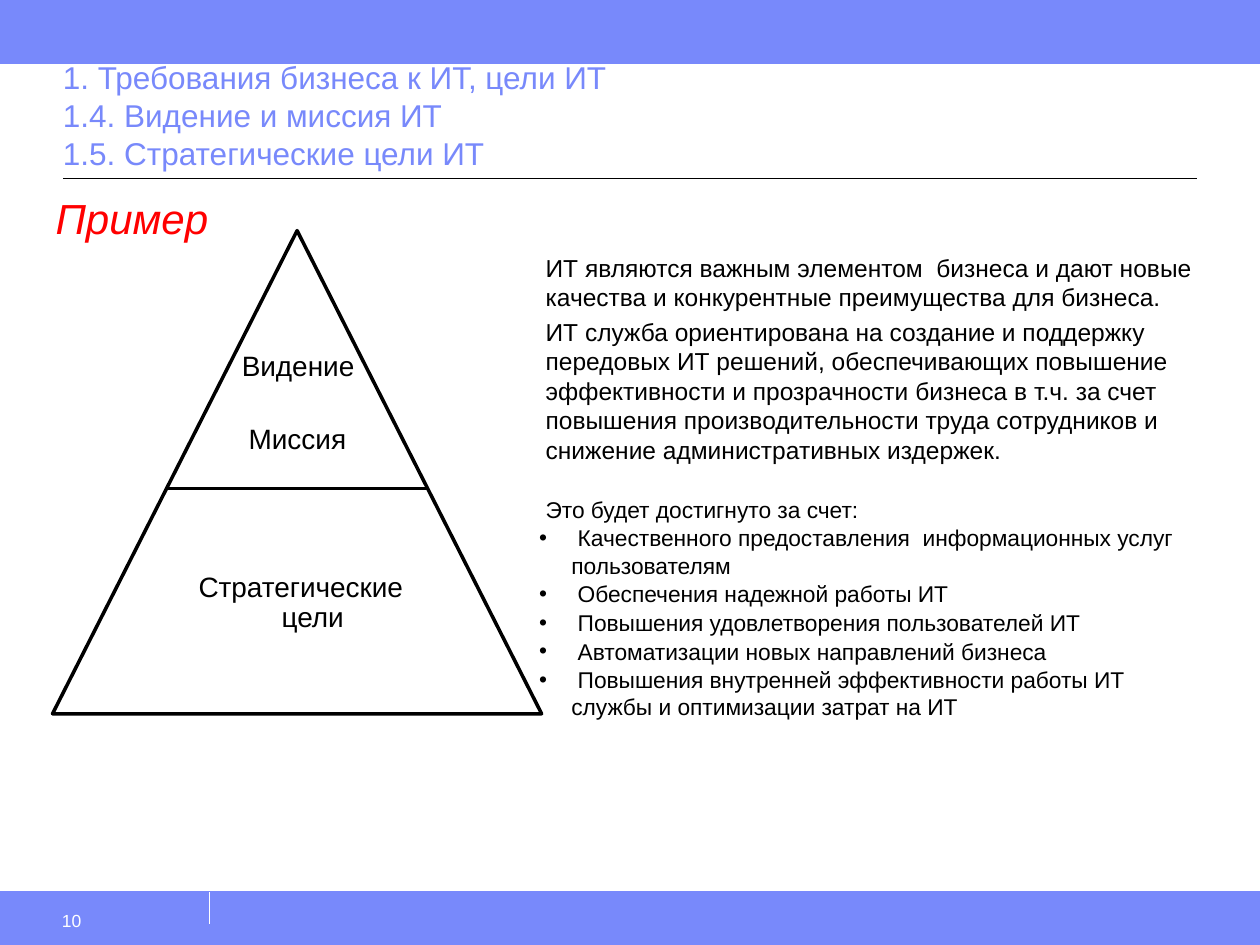
from dataclasses import dataclass

from lxml import etree
from pptx import Presentation
from pptx.dml.color import RGBColor
from pptx.enum.shapes import MSO_CONNECTOR, MSO_SHAPE
from pptx.enum.text import MSO_ANCHOR, MSO_AUTO_SIZE, PP_ALIGN
from pptx.oxml.ns import qn
from pptx.util import Cm, Pt

RECTANGLE, TRIANGLE = MSO_SHAPE.RECTANGLE, MSO_SHAPE.ISOSCELES_TRIANGLE
STRAIGHT = MSO_CONNECTOR.STRAIGHT
TOP, BOTTOM = MSO_ANCHOR.TOP, MSO_ANCHOR.BOTTOM
LEFT, CENTER, RIGHT = PP_ALIGN.LEFT, PP_ALIGN.CENTER, PP_ALIGN.RIGHT
FIT, FIXED = MSO_AUTO_SIZE.SHAPE_TO_FIT_TEXT, MSO_AUTO_SIZE.NONE

FONT = "Arial"
BLUE, BLACK, WHITE, RED = "7889FB", "000000", "FFFFFF", "FF0000"
WIDTH, HEIGHT = 25.4, 19.05
FOOTER_TOP = 17.98
MARGIN = 1.27


@dataclass
class Block:
    """Filled shape, lengths in cm."""
    preset: int
    box: tuple[float, float, float, float]
    fill: str
    line: str
    weight: float


@dataclass
class Rule:
    """Straight line, ends in cm."""
    start: tuple[float, float]
    end: tuple[float, float]
    color: str
    weight: float


@dataclass
class Line:
    """Paragraph; a line feed in the text is a line break."""
    text: str
    size: float
    color: str = BLACK
    align: int = LEFT
    margin: float = 0
    indent: float = 0
    before: float = 0
    spacing: float = 1
    bullet: bool = False
    italic: bool = False


@dataclass
class Label:
    """Text box, lengths in cm."""
    box: tuple[float, float, float, float]
    lines: list[Line]
    insets: tuple[float, float, float, float] = (0.24, 0.13, 0.24, 0.13)
    anchor: int = TOP
    wrap: bool = True
    fit: int = FIXED


def tier_line(text: str, align: int = CENTER, hanging: float = 0) -> Line:
    return Line(text, 16, align=align, margin=hanging, indent=-hanging, spacing=0.9)


def body_line(text: str, before: float, size: float = 14) -> Line:
    return Line(text, size, margin=1.52, before=before)


def bullet_line(text: str) -> Line:
    return Line(text, 13, margin=2.04, indent=-0.65, before=0.7, bullet=True)


BLOCKS = [
    Block(RECTANGLE, (0, FOOTER_TOP, WIDTH, HEIGHT - FOOTER_TOP), BLUE, BLUE, 0.75),
    Block(RECTANGLE, (0, 0, WIDTH, MARGIN), BLUE, BLUE, 0.75),
    Block(TRIANGLE, (1.06, 4.65, 9.86, 9.74), WHITE, BLACK, 2),
]

RULES = [
    Rule((4.23, 18.62), (4.23, FOOTER_TOP), WHITE, 0.75),
    Rule((0, 1.07), (WIDTH, 1.07), BLUE, 0.5),
    Rule((0, FOOTER_TOP), (WIDTH, FOOTER_TOP), BLUE, 0.5),
    Rule((MARGIN, 3.6), (WIDTH - MARGIN, 3.6), BLACK, 0.75),
    Rule((3.34, 9.85), (8.6, 9.85), BLACK, 2),
]

TITLE = """1. Требования бизнеса к ИТ, цели ИТ
1.4. Видение и миссия ИТ
1.5. Стратегические цели ИТ"""

BODY = [
    body_line("ИТ являются важным элементом  бизнеса и дают новые качества и "
              "конкурентные преимущества для бизнеса.", 0),
    body_line("ИТ служба ориентирована на создание и поддержку передовых ИТ решений, "
              "обеспечивающих повышение эффективности и прозрачности бизнеса в т.ч. "
              "за счет повышения производительности труда сотрудников и снижение "
              "административных издержек.", 3),
    body_line("Это будет достигнуто за счет:", 18, 13),
    *map(bullet_line, [
        " Качественного предоставления  информационных услуг пользователям",
        " Обеспечения надежной работы ИТ",
        " Повышения удовлетворения пользователей ИТ",
        " Автоматизации новых направлений бизнеса",
        " Повышения внутренней эффективности работы ИТ службы и оптимизации затрат на ИТ",
    ]),
]

LABELS = [
    Label((MARGIN, MARGIN, WIDTH - 2 * MARGIN, 2.32), [Line(TITLE, 18, BLUE)],
          (0, 0.13, 0, 0.13), anchor=BOTTOM),
    Label((4.51, 6.98, 3, 0.86), [tier_line("Видение")], wrap=False, fit=FIT),
    Label((4.52, 8.45, 2.7, 0.86), [tier_line("Миссия", RIGHT)], wrap=False, fit=FIT),
    Label((3.12, 11.43, 5.89, 1.47),
          [tier_line("Стратегические цели", hanging=0.48)], fit=FIT),
    Label((9.45, 5.07, 14.91, 9.5), BODY, (0.03, 0.03, 0.03, 0.03), fit=FIT),
    Label((0.84, 18.16, 3.38, 0.89), [Line("10", 10, WHITE)], (0.41, 0.18, 0.25, 0.13)),
    Label((1.12, 3.76, 3.58, 1.55),
          [Line("Пример", 24, RED, margin=0.84, indent=-0.84, italic=True)],
          (0, 0.13, 0, 0.13)),
]


def rgb(color: str) -> RGBColor:
    return RGBColor.from_string(color)


def draw_block(slide, block: Block) -> None:
    shape = slide.shapes.add_shape(block.preset, *map(Cm, block.box))
    shape.shadow.inherit = False
    shape.fill.solid()
    shape.fill.fore_color.rgb = rgb(block.fill)
    shape.line.color.rgb = rgb(block.line)
    shape.line.width = Pt(block.weight)


def draw_rule(slide, rule: Rule) -> None:
    connector = slide.shapes.add_connector(STRAIGHT, *map(Cm, rule.start + rule.end))
    connector.line.color.rgb = rgb(rule.color)
    connector.line.width = Pt(rule.weight)
    etree.SubElement(connector._element.spPr, qn("a:effectLst"))


def write_line(paragraph, line: Line) -> None:
    paragraph.alignment = line.align
    paragraph.space_before = Pt(line.before)
    paragraph.line_spacing = line.spacing
    properties = paragraph._p.get_or_add_pPr()
    properties.set("marL", str(Cm(line.margin)))
    properties.set("indent", str(Cm(line.indent)))
    if line.bullet:
        etree.SubElement(properties, qn("a:buFont")).set("typeface", FONT)
        etree.SubElement(properties, qn("a:buChar")).set("char", "•")
    for index, text in enumerate(line.text.split("\n")):
        if index:
            paragraph.add_line_break()
        run = paragraph.add_run()
        run.text = text
        run.font.name = FONT
        run.font.size = Pt(line.size)
        run.font.italic = line.italic
        run.font.color.rgb = rgb(line.color)


def draw_label(slide, label: Label) -> None:
    frame = slide.shapes.add_textbox(*map(Cm, label.box)).text_frame
    frame.word_wrap = label.wrap
    frame.auto_size = label.fit
    frame.vertical_anchor = label.anchor
    (frame.margin_left, frame.margin_top,
     frame.margin_right, frame.margin_bottom) = map(Cm, label.insets)
    for index, line in enumerate(label.lines):
        write_line(frame.add_paragraph() if index else frame.paragraphs[0], line)


def main() -> None:
    presentation = Presentation()
    presentation.slide_width, presentation.slide_height = Cm(WIDTH), Cm(HEIGHT)
    slide = presentation.slides.add_slide(presentation.slide_layouts[6])

    # Bars and pyramid, then rules, then text on top
    for block in BLOCKS:
        draw_block(slide, block)
    for rule in RULES:
        draw_rule(slide, rule)
    for label in LABELS:
        draw_label(slide, label)

    presentation.save("out.pptx")


if __name__ == "__main__":
    main()
